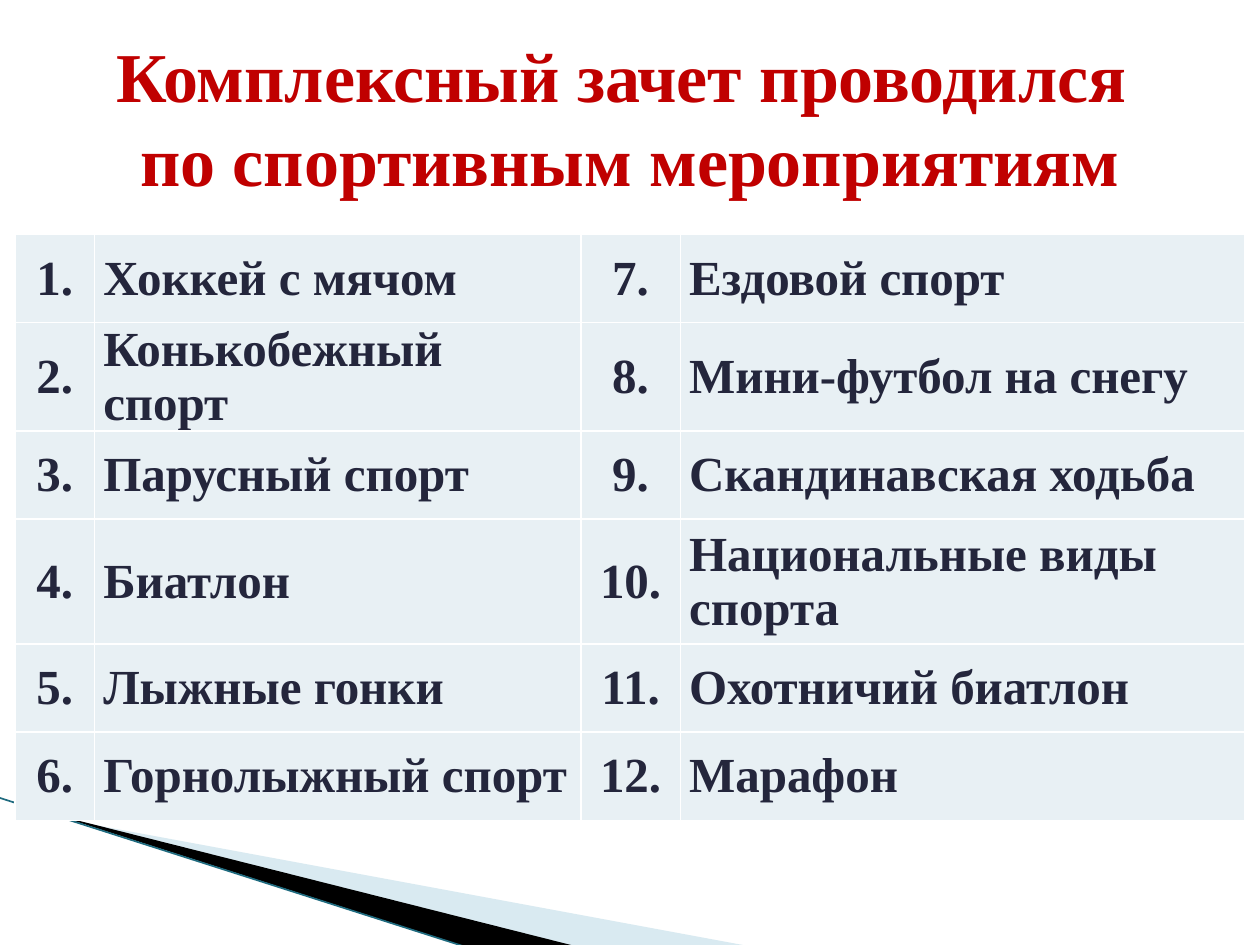
from dataclasses import dataclass

from lxml.etree import SubElement
from pptx import Presentation
from pptx.dml.color import RGBColor
from pptx.enum.shapes import MSO_CONNECTOR as Connector
from pptx.enum.text import MSO_ANCHOR as Anchor, PP_ALIGN as Align
from pptx.oxml.ns import qn
from pptx.util import Inches, Pt

FONT = "Times New Roman"
INK, RED, CELL, WHITE = "24263C", "C00000", "E8F0F4", "FFFFFF"
COLUMN_WIDTHS = (0.63, 3.86, 0.79, 4.48)
ROW_HEIGHTS = (0.7, 0.7, 0.7, 0.99, 0.7, 0.7)
SPORTS = (
    "Хоккей с мячом", "Конькобежный спорт", "Парусный спорт",
    "Биатлон", "Лыжные гонки", "Горнолыжный спорт",
    "Ездовой спорт", "Мини-футбол на снегу", "Скандинавская ходьба",
    "Национальные виды спорта", "Охотничий биатлон", "Марафон",
)


@dataclass
class Wedge:
    points: tuple
    color: str
    opacity: int = 100


WEDGES = (
    Wedge(((0.55, 6.51), (5.95, 7.51), (4.56, 7.51), (0.55, 6.5)), "A0CBDC", 40),
    Wedge(((0.53, 6.49), (4.57, 7.51), (3.72, 7.52), (0.54, 6.5)), "000000"),
)


def rgb(value: str) -> RGBColor:
    return RGBColor.from_string(value)


def style_paragraph(paragraph, size: int, color: str, align) -> None:
    paragraph.alignment = align
    font = paragraph.font
    font.name, font.size, font.bold = FONT, Pt(size), True
    font.color.rgb = rgb(color)


def draw_wedge(slide, wedge: Wedge) -> None:
    start, *others = [(Inches(x), Inches(y)) for x, y in wedge.points]
    builder = slide.shapes.build_freeform(*start)
    builder.add_line_segments(others, close=True)
    shape = builder.convert_to_shape()
    shape.shadow.inherit = False
    shape.line.fill.background()
    shape.fill.solid()
    shape.fill.fore_color.rgb = rgb(wedge.color)
    if wedge.opacity < 100:
        color = shape.fill._xPr.find(qn("a:solidFill"))[0]
        SubElement(color, qn("a:alpha"), val=str(wedge.opacity * 1000))


def draw_edge(slide) -> None:
    edge = slide.shapes.add_connector(
        Connector.STRAIGHT, Inches(-0.01), Inches(6.33), Inches(3.71), Inches(7.52))
    edge.line.color.rgb = rgb("1F6B7F")
    edge.line.width = Pt(0.95)
    SubElement(edge._element.spPr, qn("a:effectLst"))


def draw_borders(cell) -> None:
    properties = cell._tc.get_or_add_tcPr()
    for index, side in enumerate(("lnL", "lnR", "lnT", "lnB")):
        border = properties.makeelement(qn(f"a:{side}"), {"w": str(Pt(1))})
        properties.insert(index, border)
        fill = SubElement(border, qn("a:solidFill"))
        SubElement(fill, qn("a:srgbClr"), val=WHITE)


def fill_cell(cell, text: str, align) -> None:
    cell.text = text
    cell.vertical_anchor = Anchor.MIDDLE
    cell.margin_left = cell.margin_right = Inches(0.07)
    cell.margin_top = cell.margin_bottom = 0
    cell.fill.solid()
    cell.fill.fore_color.rgb = rgb(CELL)
    draw_borders(cell)
    style_paragraph(cell.text_frame.paragraphs[0], 28, INK, align)


def draw_sports(slide) -> None:
    row_count = len(ROW_HEIGHTS)
    table = slide.shapes.add_table(
        row_count, len(COLUMN_WIDTHS), Inches(0.12), Inches(1.86),
        Inches(sum(COLUMN_WIDTHS)), Inches(sum(ROW_HEIGHTS))).table
    table.first_row = table.horz_banding = False
    for column, width in zip(table.columns, COLUMN_WIDTHS):
        column.width = Inches(width)
    for row, height in zip(table.rows, ROW_HEIGHTS):
        row.height = Inches(height)
    for index, sport in enumerate(SPORTS):
        half, row = divmod(index, row_count)
        fill_cell(table.cell(row, 2 * half), f"{index + 1}.", Align.CENTER)
        fill_cell(table.cell(row, 2 * half + 1), sport, Align.LEFT)


def draw_title(slide) -> None:
    title = slide.shapes.add_textbox(Inches(0.5), Inches(0.3), Inches(9), Inches(1.25))
    frame = title.text_frame
    frame.word_wrap = True
    frame.vertical_anchor = Anchor.MIDDLE
    heading = frame.paragraphs[0]
    heading.text = "Комплексный зачет проводился \vпо спортивным мероприятиям"
    style_paragraph(heading, 40, RED, Align.CENTER)


def main() -> None:
    deck = Presentation()
    deck.slide_width, deck.slide_height = Inches(10), Inches(7.5)
    slide = deck.slides.add_slide(deck.slide_layouts[6])
    for wedge in WEDGES:
        draw_wedge(slide, wedge)
    draw_edge(slide)
    draw_sports(slide)
    draw_title(slide)
    deck.save("out.pptx")


if __name__ == "__main__":
    main()
